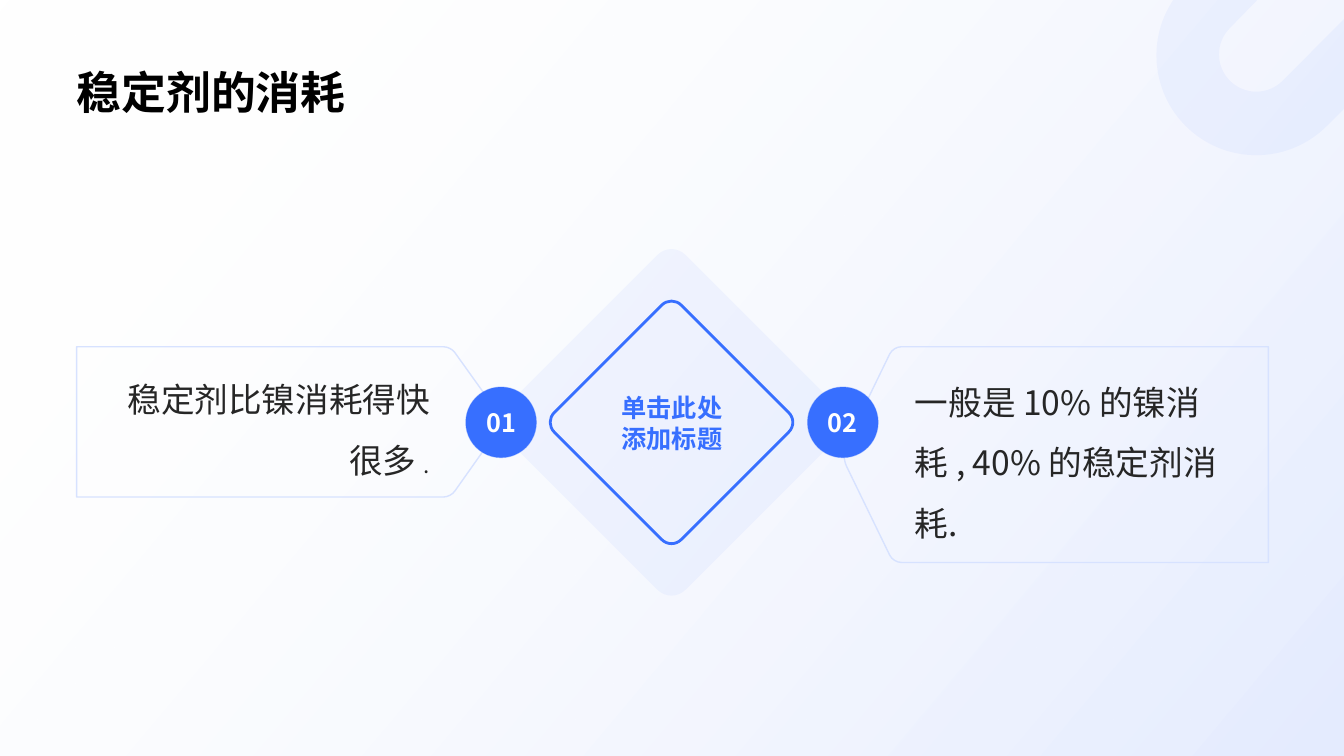
import math
from dataclasses import dataclass

from lxml import etree
from pptx import Presentation
from pptx.dml.color import RGBColor
from pptx.enum import shapes, text
from pptx.oxml import ns
from pptx.util import Inches, Pt

Point = tuple[float, float]
Segment = list[Point]

BLUE = RGBColor(0x37, 0x6F, 0xFF)
PALE_BLUE = RGBColor(0xD7, 0xE2, 0xFF)
LAVENDER = RGBColor(0xE5, 0xEC, 0xFF)
WHITE = RGBColor(0xFF, 0xFF, 0xFF)
BLACK = RGBColor(0, 0, 0)
DARK_GRAY = RGBColor(0x26, 0x26, 0x26)
FONT = "Noto Sans CJK SC"
CENTER_X, CENTER_Y = 6.66, 4.19
BADGE_SIZE = 0.7


@dataclass
class Corner:
    x: float
    y: float
    cut: float = 0


@dataclass
class Card:
    outline: list[Corner]
    words: list[tuple[str, int]]
    alignment: text.PP_ALIGN
    left_inset: float
    right_inset: float


@dataclass
class Badge:
    label: str
    left: float


def toward(start: Corner, end: Corner, distance: float) -> Point:
    share = distance / math.hypot(end.x - start.x, end.y - start.y)
    return start.x + (end.x - start.x) * share, start.y + (end.y - start.y) * share


def rounded(corners: list[Corner]) -> list[Segment]:
    segments = []
    for index, corner in enumerate(corners):
        if not corner.cut:
            segments.append([(corner.x, corner.y)])
            continue
        previous, following = corners[index - 1], corners[(index + 1) % len(corners)]
        segments.append([toward(corner, previous, corner.cut)])
        segments.append([toward(corner, previous, corner.cut * 0.43),
                         toward(corner, following, corner.cut * 0.43),
                         toward(corner, following, corner.cut)])
    return segments


def diamond(reach: float, cut: float) -> list[Segment]:
    return rounded([Corner(CENTER_X - reach, CENTER_Y, cut),
                    Corner(CENTER_X, CENTER_Y - reach, cut),
                    Corner(CENTER_X + reach, CENTER_Y, cut),
                    Corner(CENTER_X, CENTER_Y + reach, cut)])


def arc(x: float, y: float, radius: float, start: float, end: float,
        pieces: int = 2) -> list[Segment]:
    sweep = math.radians(end - start) / pieces
    handle = radius * 4 / 3 * math.tan(sweep / 4)

    def place(angle: float, offset: float = 0) -> Point:
        return (x + radius * math.cos(angle) - offset * math.sin(angle),
                y + radius * math.sin(angle) + offset * math.cos(angle))

    angles = [math.radians(start) + sweep * k for k in range(pieces + 1)]
    return [[place(angles[0])]] + [
        [place(a, handle), place(b, -handle), place(b)]
        for a, b in zip(angles, angles[1:])]


def set_alpha(element, percent: int) -> None:
    color = element.find(".//" + ns.qn("a:srgbClr"))
    etree.SubElement(color, ns.qn("a:alpha"), val=str(percent * 1000))


def add_outline(slide, segments: list[Segment], fill: RGBColor | None = None,
                line: RGBColor | None = None, width: float = 1):
    points = [(Inches(x), Inches(y)) for segment in segments for x, y in segment]
    builder = slide.shapes.build_freeform(*points[0], scale=1)
    builder.add_line_segments(points[1:], close=True)
    shape = builder.convert_to_shape()
    steps = iter(shape._element.findall(".//" + ns.qn("a:lnTo")))
    for segment in segments[1:]:
        group = [next(steps) for _ in segment]
        if len(group) == 3:
            curve = etree.Element(ns.qn("a:cubicBezTo"))
            group[0].addprevious(curve)
            for step in group:
                curve.append(step[0])
                step.getparent().remove(step)
    shape.shadow.inherit = False
    if fill is None:
        shape.fill.background()
    else:
        shape.fill.solid()
        shape.fill.fore_color.rgb = fill
        set_alpha(shape.fill._xPr, 5)
    if line is None:
        shape.line.fill.background()
    else:
        shape.line.color.rgb = line
        shape.line.width = Pt(width)
    return shape


def write(shape, words: list[tuple[str, int]], color: RGBColor, bold: bool,
          alignment: text.PP_ALIGN, insets: tuple[float, float, float, float],
          spacing: float = 1, latin: str = FONT,
          anchor: text.MSO_ANCHOR = text.MSO_ANCHOR.MIDDLE) -> None:
    frame = shape.text_frame
    frame.word_wrap = True
    frame.vertical_anchor = anchor
    (frame.margin_left, frame.margin_top,
     frame.margin_right, frame.margin_bottom) = map(Inches, insets)
    paragraph = frame.paragraphs[0]
    paragraph.alignment = alignment
    paragraph.line_spacing = spacing
    font = paragraph.font
    font.size, font.bold, font.name = Pt(words[0][1]), bold, latin
    font.color.rgb = color
    defaults = paragraph._p.pPr.find(ns.qn("a:defRPr"))
    etree.SubElement(defaults, ns.qn("a:ea"), typeface=FONT)
    for content, size in words:
        run = paragraph.add_run()
        run.text = content
        if size != words[0][1]:
            run.font.size = Pt(size)


def add_backdrop(slide, width: int, height: int) -> None:
    backdrop = slide.shapes.add_shape(shapes.MSO_SHAPE.RECTANGLE, 0, 0, width, height)
    backdrop.shadow.inherit = False
    backdrop.line.fill.background()
    backdrop.fill.gradient()
    backdrop.fill.gradient_angle = 320
    for stop, color, position in zip(backdrop.fill.gradient_stops, (WHITE, LAVENDER), (0, 1)):
        stop.color.rgb = color
        stop.position = position
    set_alpha(backdrop.fill._xPr, 0)


def add_badge(slide, badge: Badge) -> None:
    shape = slide.shapes.add_shape(
        shapes.MSO_SHAPE.OVAL, Inches(badge.left), Inches(CENTER_Y - BADGE_SIZE / 2),
        Inches(BADGE_SIZE), Inches(BADGE_SIZE))
    shape.shadow.inherit = False
    shape.fill.solid()
    shape.fill.fore_color.rgb = BLUE
    shape.line.color.rgb = BLUE
    shape.line.width = Pt(0.75)
    set_alpha(shape.line._ln, 40)
    write(shape, [(badge.label, 18)], WHITE, True, text.PP_ALIGN.CENTER, (0, 0, 0, 0))


def add_card(slide, card: Card) -> None:
    shape = add_outline(slide, rounded(card.outline), line=PALE_BLUE)
    write(shape, card.words, DARK_GRAY, False, card.alignment,
          (card.left_inset, 0, card.right_inset, 0.05), spacing=1.5)


CARDS = [
    Card([Corner(0.76, 3.44), Corner(4.47, 3.44, 0.07), Corner(5, 4.18, 0.1),
          Corner(4.47, 4.93, 0.07), Corner(0.76, 4.93)],
         [("稳定剂比镍消耗得快很多 ", 24), (".", 16)], text.PP_ALIGN.RIGHT, 0.35, 0.71),
    Card([Corner(12.58, 3.44), Corner(12.58, 5.58), Corner(8.86, 5.58, 0.08),
          Corner(8.34, 4.51, 0.13), Corner(8.86, 3.44, 0.08)],
         [("一般是 10% 的镍消耗 , 40% 的稳定剂消耗.", 24)], text.PP_ALIGN.LEFT, 0.71, 0.35),
]
BADGES = [Badge("01", 4.62), Badge("02", 8.01)]


def main() -> None:
    presentation = Presentation()
    presentation.slide_width, presentation.slide_height = Inches(13.33), Inches(7.5)
    slide = presentation.slides.add_slide(presentation.slide_layouts[5])
    add_backdrop(slide, presentation.slide_width, presentation.slide_height)
    add_outline(slide, arc(12.46, 0.55, 0.99, 45, 214) + [[(11.66, 0)], [(12.47, 0)]]
                + arc(12.46, 0.54, 0.37, 225, 45) + [[(13.33, 0.19)], [(13.33, 1.08)]],
                fill=BLUE)

    title = slide.shapes.title
    slide.shapes._spTree.append(title._element)
    title.left, title.top = Inches(0.76), Inches(0.39)
    title.width, title.height = Inches(11.81), Inches(0.79)
    write(title, [("稳定剂的消耗", 32)], BLACK, True, text.PP_ALIGN.LEFT, (0, 0, 0, 0),
          latin="Arial", anchor=text.MSO_ANCHOR.BOTTOM)

    add_outline(slide, diamond(1.8, 0.2), fill=BLUE)
    for card in CARDS:
        add_card(slide, card)
    for badge in BADGES:
        add_badge(slide, badge)
    center = add_outline(slide, diamond(1.26, 0.14), line=BLUE, width=2)
    write(center, [("单击此处添加标题", 18)], BLUE, True, text.PP_ALIGN.CENTER,
          (0.7, 0.85, 0.69, 0.84))
    presentation.save("out.pptx")


if __name__ == "__main__":
    main()
